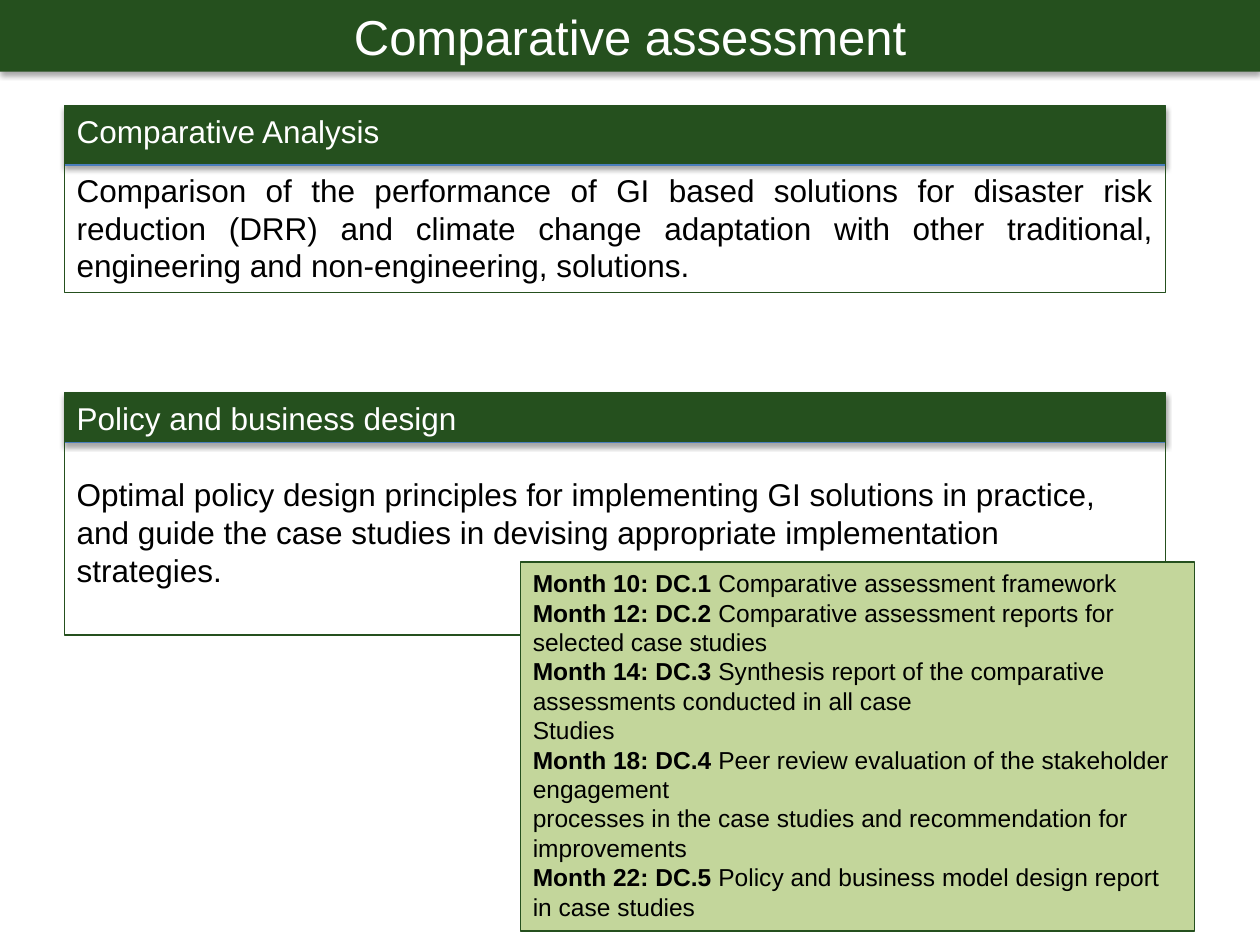
from dataclasses import dataclass

from lxml.etree import SubElement
from pptx import Presentation
from pptx.dml.color import RGBColor
from pptx.enum.shapes import MSO_SHAPE as Shape
from pptx.enum.text import MSO_ANCHOR as Anchor, PP_ALIGN as Align
from pptx.oxml.ns import qn
from pptx.util import Inches, Pt


@dataclass(frozen=True)
class Theme:
    """Colours, font and type sizes of the slide."""
    green: str = "25501E"
    light_green: str = "C3D69B"
    blue: str = "4B7EBC"
    white: str = "FFFFFF"
    black: str = "000000"
    font: str = "Arial"
    title: int = 28
    body: int = 18
    small: int = 14


THEME = Theme()

MILESTONES = [
    ("Month 10: DC.1 ", "Comparative assessment framework"),
    ("Month 12: DC.2 ", "Comparative assessment reports for selected case studies"),
    ("Month 14: DC.3 ", "Synthesis report of the comparative assessments conducted in all case"),
    ("", "Studies"),
    ("Month 18: DC.4 ", "Peer review evaluation of the stakeholder engagement"),
    ("", "processes in the case studies and recommendation for improvements"),
    ("Month 22: DC.5 ", "Policy and business model design report in case studies"),
]


def add_shadow(box):
    """Give a box a soft shadow that falls straight down."""
    effects = box._element.spPr.find(qn("a:effectLst"))
    shadow = SubElement(effects, qn("a:outerShdw"), blurRad=str(Pt(3.1)),
                        dist=str(Pt(1.8)), dir="5400000", rotWithShape="0")
    colour = SubElement(shadow, qn("a:srgbClr"), val=THEME.black)
    SubElement(colour, qn("a:alpha"), val="35000")


def add_box(page, left, top, width, height, fill=None, line=None, shadow=False):
    """Place a rectangle with top-anchored, wrapping text."""
    box = page.shapes.add_shape(Shape.RECTANGLE, left, top, width, height)
    box.shadow.inherit = False
    if fill:
        box.fill.solid()
        box.fill.fore_color.rgb = RGBColor.from_string(fill)
    else:
        box.fill.background()
    if line:
        box.line.color.rgb = RGBColor.from_string(line)
        box.line.width = Pt(0.75)
    else:
        box.line.fill.background()
    if shadow:
        add_shadow(box)
    box.text_frame.word_wrap = True
    box.text_frame.vertical_anchor = Anchor.TOP
    return box


def next_para(box, align=Align.LEFT, after=0):
    """Return the empty first paragraph of a box, or a new one."""
    frame = box.text_frame
    para = frame.paragraphs[0]
    if para.runs:
        para = frame.add_paragraph()
    para.alignment = align
    para.space_after = Pt(after)
    return para


def add_text(para, text, size=THEME.body, colour=THEME.black, bold=False):
    """Add a formatted span of text to a paragraph."""
    span = para.add_run()
    span.text = text
    span.font.name = THEME.font
    span.font.size = Pt(size)
    span.font.bold = bold
    span.font.color.rgb = RGBColor.from_string(colour)


def add_title(page, left, top, width, height, text):
    """Draw the title band."""
    box = add_box(page, left, top, width, height, fill=THEME.green, shadow=True)
    add_text(next_para(box, Align.CENTER), text, size=THEME.title, colour=THEME.white)


def add_section(page, left, top, width, height, band, heading, body, align, gap):
    """Draw an outlined section with a heading over a green band."""
    add_box(page, left, top, width, band, fill=THEME.green, line=THEME.blue, shadow=True)
    box = add_box(page, left, top, width, height, line=THEME.green)
    add_text(next_para(box, align, gap), heading, colour=THEME.white)
    add_text(next_para(box, align), body)


def add_milestones(page, left, top, width, height, milestones):
    """Draw the panel that lists deliverables by month."""
    box = add_box(page, left, top, width, height, fill=THEME.light_green, line=THEME.green)
    for label, text in milestones:
        para = next_para(box)
        if label:
            add_text(para, label, size=THEME.small, bold=True)
        add_text(para, text, size=THEME.small)


def main():
    """Build and save the slide."""
    deck = Presentation()
    deck.slide_width, deck.slide_height = Inches(10), Inches(7.5)
    page = deck.slides.add_slide(deck.slide_layouts[6])
    left, width = Inches(0.51), Inches(8.74)
    add_section(
        page, left, Inches(0.84), width, Inches(1.48), Inches(0.47),
        "Comparative Analysis",
        "Comparison of the performance of GI based solutions for disaster risk reduction "
        "(DRR) and climate change adaptation with other traditional, engineering and "
        "non-engineering, solutions.",
        Align.JUSTIFY, 12)
    add_section(
        page, left, Inches(3.12), width, Inches(1.92), Inches(0.39),
        "Policy and business design",
        "Optimal policy design principles for implementing GI solutions in practice, and "
        "guide the case studies in devising appropriate implementation strategies.",
        Align.LEFT, 21.6)
    add_title(page, 0, 0, deck.slide_width, Inches(0.57), "Comparative assessment")
    add_milestones(page, Inches(4.13), Inches(4.46), Inches(5.35), Inches(2.93), MILESTONES)
    deck.save("out.pptx")


if __name__ == "__main__":
    main()
